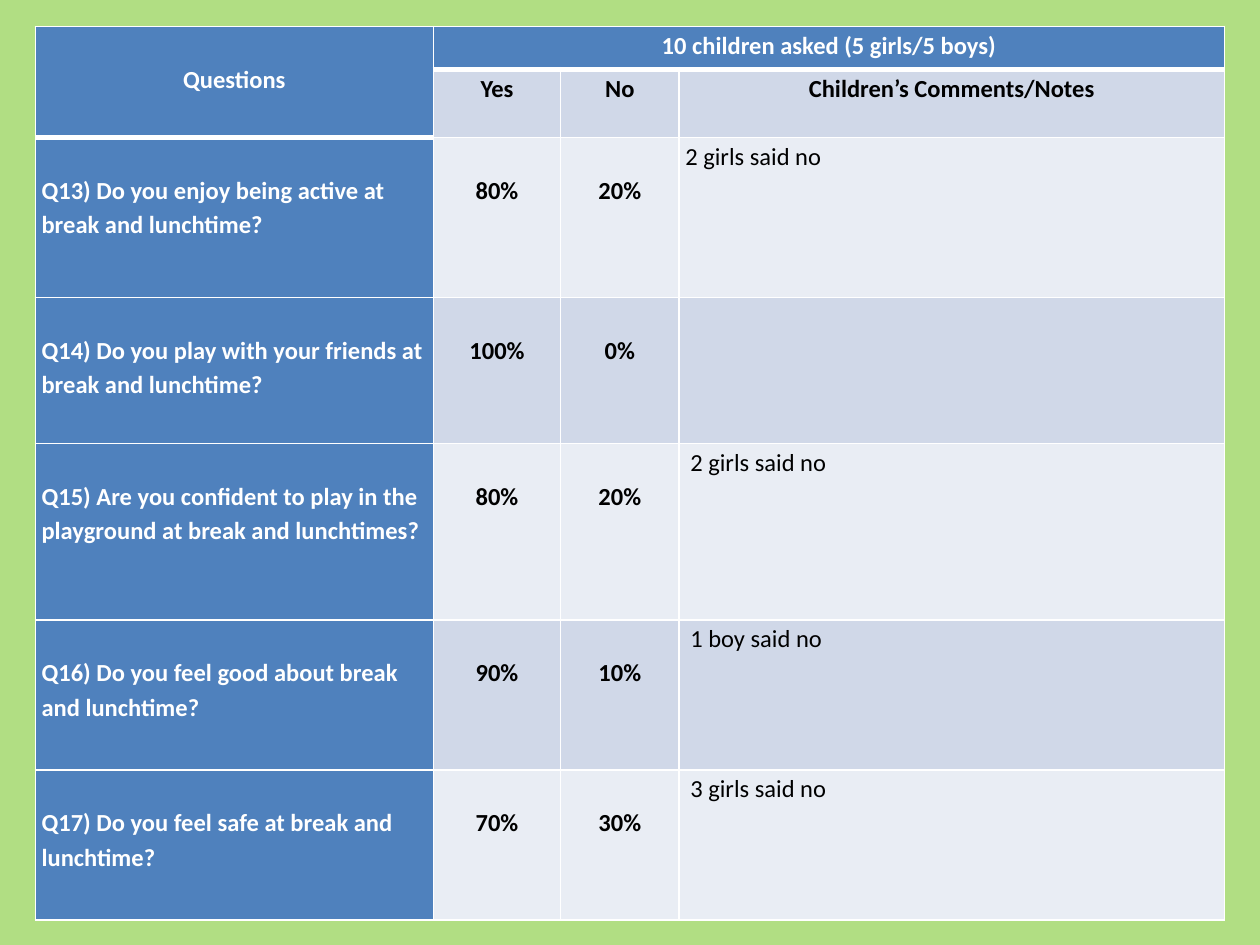
from dataclasses import dataclass

from lxml import etree
from pptx import Presentation
from pptx.dml.color import RGBColor
from pptx.enum.text import PP_ALIGN
from pptx.oxml.ns import qn
from pptx.util import Inches, Pt

LEFT, CENTER = PP_ALIGN.LEFT, PP_ALIGN.CENTER


@dataclass(frozen=True)
class Theme:
    background: str = "B1DE83"
    header: str = "4F81BD"
    dark_band: str = "D0D8E8"
    light_band: str = "E9EDF4"
    white: str = "FFFFFF"
    black: str = "000000"
    font: str = "Calibri"
    text_size: int = 14
    thin_line: int = 1
    thick_line: int = 3
    line_spacing: float = 1.15
    margin: float = 0.05
    one_line: float = 0.27


@dataclass(frozen=True)
class Answer:
    question: str
    yes: str
    no: str
    comment: str = ""
    comment_margin: float = 0.09


@dataclass(frozen=True)
class CellStyle:
    fill: str
    color: str
    bold: bool = True
    alignment: PP_ALIGN = CENTER
    top: float = 0
    left: float = 0.05


THEME = Theme()
COLUMN_WIDTHS = (3.16, 1.01, 0.94, 4.33)
ROW_HEIGHTS = (0.34, 0.54, 1.27, 1.16, 1.4, 1.19, 1.19)
SUBHEADINGS = ("Yes", "No", "Children’s Comments/Notes")
ANSWERS = (
    Answer("Q13) Do you enjoy being active at break and lunchtime?",
           "80%", "20%", "2 girls said no", 0.05),
    Answer("Q14) Do you play with your friends at break and lunchtime?",
           "100%", "0%"),
    Answer("Q15) Are you confident to play in the playground at break and lunchtimes?",
           "80%", "20%", "2 girls said no"),
    Answer("Q16) Do you feel good about break and lunchtime?",
           "90%", "10%", "1 boy said no"),
    Answer("Q17) Do you feel safe at break and lunchtime?",
           "70%", "30%", "3 girls said no"),
)


def set_borders(cell, top: int, bottom: int) -> None:
    """Draw white cell borders; must run before the cell gets its fill."""
    properties = cell._tc.get_or_add_tcPr()
    widths = {"L": THEME.thin_line, "R": THEME.thin_line, "T": top, "B": bottom}
    for side, width in widths.items():
        line = etree.SubElement(properties, qn(f"a:ln{side}"), w=str(Pt(width)))
        fill = etree.SubElement(line, qn("a:solidFill"))
        etree.SubElement(fill, qn("a:srgbClr"), val=THEME.white)


def write_cell(cell, text: str, style: CellStyle) -> None:
    cell.fill.solid()
    cell.fill.fore_color.rgb = RGBColor.from_string(style.fill)
    cell.margin_left, cell.margin_right = Inches(style.left), Inches(THEME.margin)
    cell.margin_top, cell.margin_bottom = Inches(style.top), Inches(0)
    cell.text_frame.text = text
    paragraph = cell.text_frame.paragraphs[0]
    paragraph.alignment = style.alignment
    paragraph.line_spacing = THEME.line_spacing
    for run in paragraph.runs:
        run.font.name = THEME.font
        run.font.size = Pt(THEME.text_size)
        run.font.bold = style.bold
        run.font.color.rgb = RGBColor.from_string(style.color)


def add_survey_table(slide):
    frame = slide.shapes.add_table(
        len(ROW_HEIGHTS), len(COLUMN_WIDTHS), Inches(0.28), Inches(0.21),
        Inches(sum(COLUMN_WIDTHS)), Inches(sum(ROW_HEIGHTS)))
    table = frame.table
    table.first_row = table.horz_banding = False
    for column, width in zip(table.columns, COLUMN_WIDTHS):
        column.width = Inches(width)
    for row, height in zip(table.rows, ROW_HEIGHTS):
        row.height = Inches(height)
    return table


def draw_borders(table) -> None:
    """Thin lines everywhere, with a thick one under each heading cell."""
    for row in range(len(ROW_HEIGHTS)):
        for column in range(len(COLUMN_WIDTHS)):
            last_heading_row = 1 if column == 0 else 0
            top = THEME.thick_line if row == last_heading_row + 1 else THEME.thin_line
            bottom = THEME.thick_line if row == last_heading_row else THEME.thin_line
            set_borders(table.cell(row, column), top, bottom)


def write_headings(table) -> None:
    table.cell(0, 0).merge(table.cell(1, 0))
    table.cell(0, 1).merge(table.cell(0, 3))
    write_cell(table.cell(0, 0), "Questions",
               CellStyle(THEME.header, THEME.white, top=THEME.one_line))
    write_cell(table.cell(0, 1), "10 children asked (5 girls/5 boys)",
               CellStyle(THEME.header, THEME.white))
    for column, heading in enumerate(SUBHEADINGS, start=1):
        write_cell(table.cell(1, column), heading,
                   CellStyle(THEME.dark_band, THEME.black))


def write_answer(table, row: int, answer: Answer) -> None:
    band = THEME.dark_band if row % 2 else THEME.light_band
    share = CellStyle(band, THEME.black, top=THEME.one_line)
    write_cell(table.cell(row, 0), answer.question,
               CellStyle(THEME.header, THEME.white, alignment=LEFT, top=THEME.one_line))
    write_cell(table.cell(row, 1), answer.yes, share)
    write_cell(table.cell(row, 2), answer.no, share)
    write_cell(table.cell(row, 3), answer.comment,
               CellStyle(band, THEME.black, bold=False, alignment=LEFT,
                         left=answer.comment_margin))


def main() -> None:
    presentation = Presentation()
    presentation.slide_width, presentation.slide_height = Inches(10), Inches(7.5)
    slide = presentation.slides.add_slide(presentation.slide_layouts[6])
    slide.background.fill.solid()
    slide.background.fill.fore_color.rgb = RGBColor.from_string(THEME.background)

    table = add_survey_table(slide)
    draw_borders(table)
    write_headings(table)
    for row, answer in enumerate(ANSWERS, start=2):
        write_answer(table, row, answer)
    presentation.save("out.pptx")


if __name__ == "__main__":
    main()
